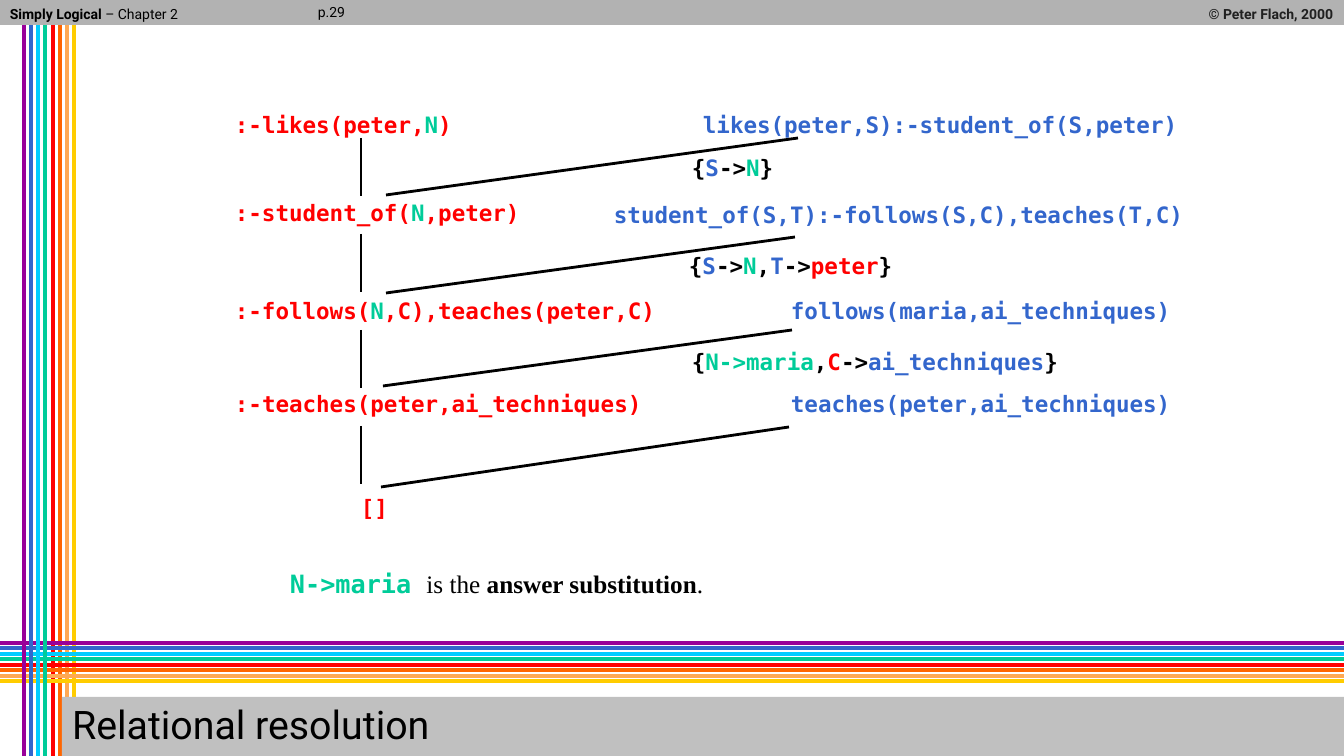
"""Build the 'Relational resolution' slide: a resolution proof tree with its answer substitution."""
from dataclasses import dataclass

from lxml.etree import SubElement
from pptx import Presentation
from pptx.dml.color import RGBColor as RGB
from pptx.enum.shapes import MSO_CONNECTOR as LINE, MSO_SHAPE as SHAPE
from pptx.enum.text import MSO_ANCHOR as ANCHOR, MSO_AUTO_SIZE as FIT, PP_ALIGN as ALIGN
from pptx.oxml.ns import qn
from pptx.util import Emu, Pt

PX = 914400 / 100.8
MONO, SANS, SERIF = "DejaVu Sans Mono", "Roboto", "Times New Roman"


@dataclass(frozen=True)
class Theme:
    red: str = "FF0000"
    blue: str = "3366CC"
    green: str = "00CC99"
    black: str = "000000"
    owner: str = "202020"
    header_bar: str = "B2B2B2"
    title_bar: str = "C0C0C0"
    stripes: tuple = ("990099", "3366CC", "00CCFF", "00CC99",
                      "FF0000", "FF6600", "FFA953", "FFCC00")
    header_size: float = 10
    title_size: float = 28.1
    code_size: float = 16.1
    answer_size: float = 18
    stripe_width: float = 2.25
    branch_width: float = 2


theme = Theme()
red, blue, green, black = theme.red, theme.blue, theme.green, theme.black

prs = Presentation()
prs.slide_width, prs.slide_height = Emu(round(1344 * PX)), Emu(round(756 * PX))
slide = prs.slides.add_slide(prs.slide_layouts[5])
shapes = slide.shapes


def add_line(x1, y1, x2, y2, color, width):
    """Draw a straight line without a shadow."""
    ends = [Emu(round(n * PX)) for n in (x1, y1, x2, y2)]
    line = shapes.add_connector(LINE.STRAIGHT, *ends)
    line.line.color.rgb = RGB.from_string(color)
    line.line.width = Pt(width)
    SubElement(line._element.spPr, qn("a:effectLst"))


def write(holder, box, runs, size, wrap=False, align=ALIGN.LEFT, spacing=0.9, fit=FIT.NONE):
    """Place a shape and fill it with (text, colour, font, bold) runs."""
    holder.left, holder.top, holder.width, holder.height = (Emu(round(n * PX)) for n in box)
    frame = holder.text_frame
    frame.word_wrap, frame.auto_size = wrap, fit
    paragraph = frame.paragraphs[0]
    paragraph.alignment, paragraph.line_spacing = align, spacing
    for text, color, font, bold in runs:
        run = paragraph.add_run()
        run.text = text
        run.font.name, run.font.size, run.font.bold = font, Pt(size), bold
        run.font.color.rgb = RGB.from_string(color)


stripes = list(enumerate(theme.stripes))
for i, color in stripes[4:]:
    add_line(24 + i * 29 // 4, 0, 24 + i * 29 // 4, 756, color, theme.stripe_width)
for i, color in stripes:
    add_line(1344, 643 + i * 11 // 2, 0, 643 + i * 11 // 2, color, theme.stripe_width)
for i, color in stripes[:4]:
    add_line(24 + i * 29 // 4, 0, 24 + i * 29 // 4, 756, color, theme.stripe_width)

header_bar = shapes.add_shape(SHAPE.RECTANGLE, 0, 0, prs.slide_width, Emu(round(25 * PX)))
header_bar.shadow.inherit = False
header_bar.fill.solid()
header_bar.fill.fore_color.rgb = RGB.from_string(theme.header_bar)
header_bar.line.fill.background()

headers = [
    ((0, 2, 269, 25), True, ALIGN.LEFT, [("Simply Logical", black, SANS, True),
                                         (" – Chapter 2", black, SANS, False)]),
    ((980, 2, 363, 25), True, ALIGN.RIGHT, [("© Peter Flach, 2000", theme.owner, SANS, True)]),
    ((308, 0, 77, 25), False, ALIGN.LEFT, [("p.29", black, SANS, False)]),
]
for box, wrap, align, runs in headers:
    write(shapes.add_textbox(0, 0, 0, 0), box, runs, theme.header_size, wrap, align)

title = shapes.title
shapes._spTree.append(title._element)
title.fill.solid()
title.fill.fore_color.rgb = RGB.from_string(theme.title_bar)
title.text_frame.vertical_anchor = ANCHOR.MIDDLE
write(title, (62, 697, 1282, 60),
      [("Relational resolution", black, SANS, False)], theme.title_size)

goals = [
    (225, 109, [(":-likes(peter,", red), ("N", green), (")", red)]),
    (225, 197, [(":-student_of(", red), ("N", green), (",peter)", red)]),
    (225, 295, [(":-follows(", red), ("N", green), (",C),teaches(peter,C)", red)]),
    (225, 388, [(":-teaches(peter,ai_techniques)", red)]),
    (351, 492, [("[]", red)]),
]
clauses = [
    (693, 109, [("likes(peter,S):-student_of(S,peter)", blue)]),
    (604, 199, [("student_of(S,T):-follows(S,C),teaches(T,C)", blue)]),
    (781, 295, [("follows(maria,ai_techniques)", blue)]),
    (781, 388, [("teaches(peter,ai_techniques)", blue)]),
]
substitutions = [
    (682, 152, [("{", black), ("S", blue), ("->", black), ("N", green), ("}", black)]),
    (679, 250, [("{", black), ("S", blue), ("->", black), ("N", green), (",", black),
                ("T", blue), ("->", black), ("peter", red), ("}", black)]),
    (682, 346, [("{", black), ("N->maria", green), (",", black), ("C", red),
                ("->", black), ("ai_techniques", blue), ("}", black)]),
]
for left, top, parts in goals + clauses + substitutions:
    letters = sum(len(text) for text, color in parts)
    runs = [(text, color, MONO, True) for text, color in parts]
    write(shapes.add_textbox(0, 0, 0, 0), (left, top, 24 + round(13.55 * letters), 35),
          runs, theme.code_size, fit=FIT.SHAPE_TO_FIT_TEXT)

for step in range(4):
    add_line(361, 138 + 96 * step, 361, 196 + 96 * step, black, theme.branch_width)
clause_branches = [(386, 195, 798, 138), (386, 293, 795, 237),
                   (383, 386, 792, 330), (381, 487, 789, 427)]
for branch in clause_branches:
    add_line(*branch, black, theme.branch_width)

answer = [("N->maria ", green, MONO, True), ("is the ", black, SERIF, False),
          ("answer substitution", black, SERIF, True), (".", black, SERIF, False)]
write(shapes.add_textbox(0, 0, 0, 0), (280, 563, 436, 40), answer, theme.answer_size,
      spacing=1.0, fit=FIT.SHAPE_TO_FIT_TEXT)

prs.save("out.pptx")
